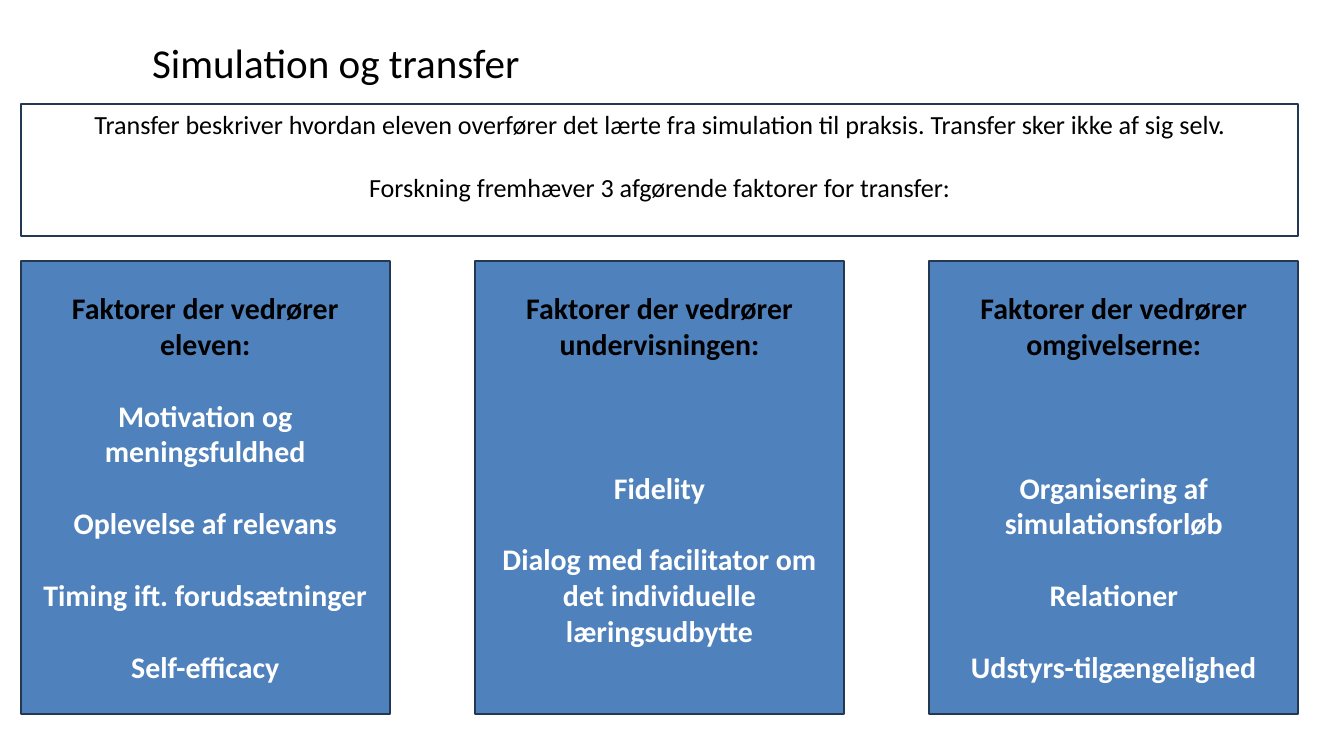
from typing import NamedTuple

from pptx import Presentation
from pptx.dml.color import RGBColor
from pptx.enum.shapes import MSO_SHAPE as Preset
from pptx.enum.text import MSO_ANCHOR as Anchor, PP_ALIGN as Align
from pptx.shapes.autoshape import Shape
from pptx.slide import Slide
from pptx.util import Inches, Pt

FONT = "Calibri"
BLACK, WHITE, BLUE, NAVY = "000000", "FFFFFF", "4F81BD", "233953"

MARGIN = 0.31
CONTENT_WIDTH = 19.01
COLUMN_WIDTH = 5.49
COLUMN_TOP = 3.89
COLUMN_HEIGHT = 6.73
HEADING_GAP = 38.5  # one empty line of the column text, in points
BANNER_GAP = 33.75


class Line(NamedTuple):
    text: str
    size: float
    color: str = BLACK
    bold: bool = False
    gap: float = 0


class Factor(NamedTuple):
    heading: str
    points: list[str]
    heading_lines: int  # empty lines between the heading and the points


FACTORS = [
    Factor("Faktorer der vedrører eleven:",
           ["Motivation og meningsfuldhed", "Oplevelse af relevans",
            "Timing ift. forudsætninger", "Self-efficacy"], 1),
    Factor("Faktorer der vedrører undervisningen:",
           ["Fidelity", "Dialog med facilitator om det individuelle læringsudbytte"], 3),
    Factor("Faktorer der vedrører omgivelserne:",
           ["Organisering af simulationsforløb", "Relationer",
            "Udstyrs-tilgængelighed"], 3),
]


def rgb(value: str) -> RGBColor:
    return RGBColor.from_string(value)


def write_lines(holder: Shape, lines: list[Line], anchor: Anchor, top_inset: float) -> None:
    frame = holder.text_frame
    frame.word_wrap = True
    frame.vertical_anchor = anchor
    frame.margin_top = Inches(top_inset)
    for index, line in enumerate(lines):
        paragraph = frame.add_paragraph() if index else frame.paragraphs[0]
        paragraph.alignment = Align.CENTER
        if line.gap:
            paragraph.space_before = Pt(line.gap)
        run = paragraph.add_run()
        run.text = line.text
        run.font.name = FONT
        run.font.size = Pt(line.size)
        run.font.bold = line.bold
        run.font.color.rgb = rgb(line.color)


def add_panel(slide: Slide, left: float, top: float, width: float, height: float,
              fill: str, lines: list[Line], top_inset: float) -> None:
    """Draw a bordered rectangle with centred lines starting at its top."""
    panel = slide.shapes.add_shape(Preset.RECTANGLE, Inches(left), Inches(top),
                                   Inches(width), Inches(height))
    panel.shadow.inherit = False
    panel.fill.solid()
    panel.fill.fore_color.rgb = rgb(fill)
    panel.line.color.rgb = rgb(NAVY)
    panel.line.width = Pt(2)
    write_lines(panel, lines, Anchor.TOP, top_inset)


def factor_lines(factor: Factor) -> list[Line]:
    lines = [Line(factor.heading, 32, bold=True)]
    for index, point in enumerate(factor.points):
        empty_lines = 1 if index else factor.heading_lines
        lines.append(Line(point, 32, WHITE, True, empty_lines * HEADING_GAP))
    return lines


def main() -> None:
    deck = Presentation()
    deck.slide_width, deck.slide_height = Inches(20), Inches(11.25)
    slide = deck.slides.add_slide(deck.slide_layouts[6])

    title = slide.shapes.add_textbox(Inches(0.5), Inches(0.3), Inches(9), Inches(1.25))
    write_lines(title, [Line("Simulation og transfer", 44)], Anchor.MIDDLE, 0.05)

    introduction = [
        Line("Transfer beskriver hvordan eleven overfører det lærte fra simulation "
             "til praksis. Transfer sker ikke af sig selv.", 28),
        Line("Forskning fremhæver 3 afgørende faktorer for transfer:", 28, gap=BANNER_GAP),
    ]
    add_panel(slide, MARGIN, 1.55, CONTENT_WIDTH, 1.96, WHITE, introduction, 0.06)

    column_step = (CONTENT_WIDTH - COLUMN_WIDTH) / (len(FACTORS) - 1)
    for index, factor in enumerate(FACTORS):
        add_panel(slide, MARGIN + index * column_step, COLUMN_TOP, COLUMN_WIDTH,
                  COLUMN_HEIGHT, BLUE, factor_lines(factor), 0.42)

    deck.save("out.pptx")


if __name__ == "__main__":
    main()
